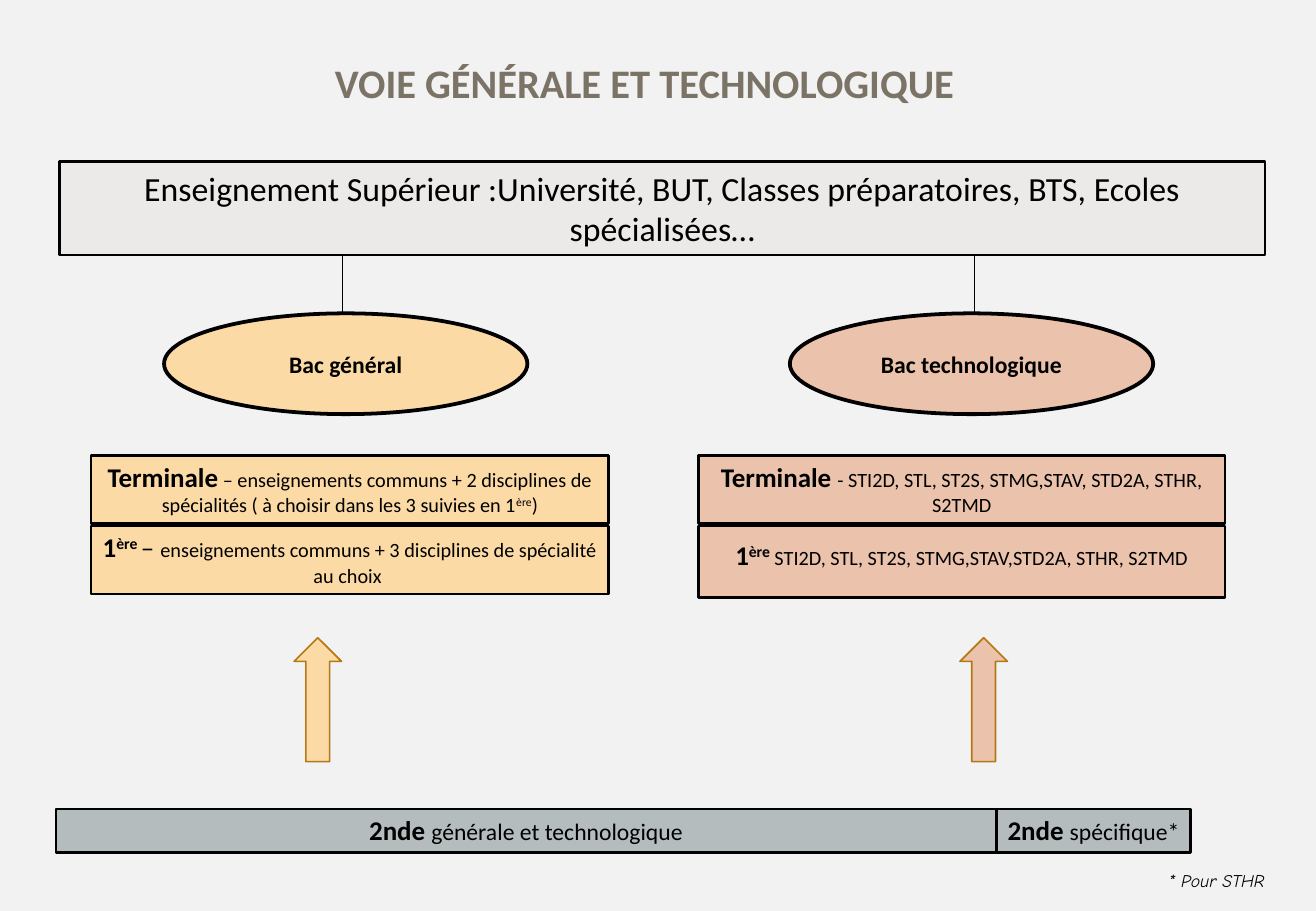
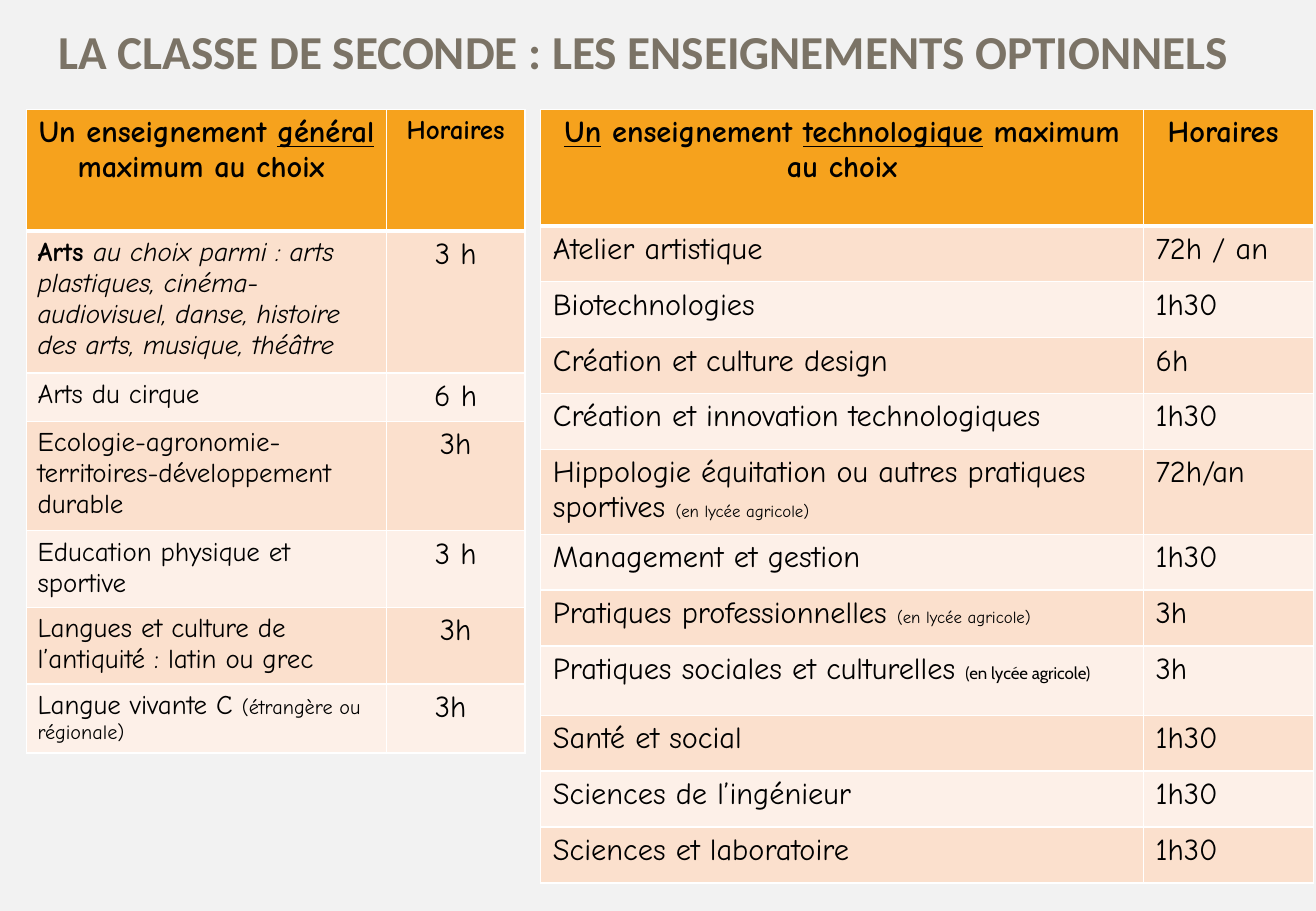
from lxml import etree
from pptx import Presentation
from pptx.dml.color import RGBColor
from pptx.enum.shapes import MSO_CONNECTOR, MSO_SHAPE
from pptx.enum.text import MSO_ANCHOR, MSO_AUTO_SIZE, PP_ALIGN
from pptx.oxml.ns import qn
from pptx.util import Inches, Pt

CENTER, LEFT = PP_ALIGN.CENTER, PP_ALIGN.LEFT
TOP, MIDDLE = MSO_ANCHOR.TOP, MSO_ANCHOR.MIDDLE
RECTANGLE, OVAL, UP_ARROW = MSO_SHAPE.RECTANGLE, MSO_SHAPE.OVAL, MSO_SHAPE.UP_ARROW
STRAIGHT = MSO_CONNECTOR.STRAIGHT
NO_AUTOFIT = MSO_AUTO_SIZE.NONE
TITLE_ONLY = 5

BACKGROUND, TITLE_COLOR, BLACK, WHITE = "F2F2F2", "7B7366", "000000", "FFFFFF"
GENERAL, TECHNOLOGICAL, SECONDE, HIGHER = "FBDAA5", "EBC2AB", "B4BCBE", "ECEAE8"
ARROW_LINE, HEADER = "B67815", "F6A21D"
BANDS = ("FBE0CD", "FDF0E8")
SANS, HAND, SMALL_SANS = "Calibri", "Comic Neue", "Cabin"
TIGHT, NORMAL = (0.09, 0.04, 0.09, 0.04), (0.1, 0.05, 0.1, 0.05)

BOLD_16 = {"size": 16, "bold": True}
SUPERSCRIPT = {"baseline": 30}
FARM_SCHOOL = "(en lycée agricole)"

GENERAL_ROWS = [
    ([("Un enseignement ", {}), ("général", {"underline": True}),
      (" maximum au choix ", {})], [("Horaires", {"size": 16})]),
    ([("Arts ", {"bold": True}),
      ("au choix parmi : arts plastiques, cinéma-audiovisuel, danse, "
       "histoire des arts, musique, théâtre", {"italic": True})], "3 h"),
    ("Arts du cirque", "6 h"),
    ("Ecologie-agronomie-territoires-développement durable", "3h"),
    ("Education physique et sportive", "3 h"),
    ("Langues et culture de l’antiquité : latin ou grec", "3h"),
    ([("Langue vivante C ", {}), ("(étrangère ou régionale)", {"size": 12})], "3h "),
]
TECHNOLOGICAL_ROWS = [
    ([("Un", {"underline": True}), (" enseignement ", {}),
      ("technologique", {"underline": True}), (" maximum au choix", {})], "Horaires "),
    ("Atelier artistique", "72h / an"),
    ("Biotechnologies", "1h30"),
    ("Création et culture design", "6h"),
    ("Création et innovation technologiques", "1h30"),
    ([("Hippologie équitation ou autres pratiques sportives ", {}),
      (FARM_SCHOOL, {"size": 10})], "72h/an"),
    ("Management et gestion", "1h30"),
    ([("Pratiques professionnelles ", {}), (FARM_SCHOOL, {"size": 10})], "3h"),
    ([("Pratiques sociales et culturelles ", {}),
      (FARM_SCHOOL, {"size": 10, "font": SMALL_SANS})], "3h"),
    ("Santé et social", "1h30"),
    ("Sciences de l’ingénieur", "1h30"),
    ("Sciences et laboratoire", "1h30"),
]


def rgb(color):
    return RGBColor.from_string(color)


def place(left, top, width, height):
    return [Inches(value) for value in (left, top, width, height)]


def write_text(text_frame, content, alignment=CENTER, **defaults):
    runs = [(content, {})] if isinstance(content, str) else content
    paragraph = text_frame.paragraphs[0]
    paragraph.alignment = alignment
    for text, changes in runs:
        style = {"font": SANS, "size": 12, "color": BLACK, "bold": False, **defaults, **changes}
        run = paragraph.add_run()
        run.text = text
        font = run.font
        font.name = style["font"]
        font.size = Pt(style["size"])
        font.bold = style["bold"]
        font.italic = style.get("italic", False)
        font.underline = style.get("underline", False)
        font.color.rgb = rgb(style["color"])
        if "baseline" in style:
            run._r.get_or_add_rPr().set("baseline", str(style["baseline"] * 1000))


def set_frame(text_frame, insets, anchor=TOP):
    text_frame.word_wrap = True
    text_frame.auto_size = NO_AUTOFIT
    text_frame.vertical_anchor = anchor
    (text_frame.margin_left, text_frame.margin_top,
     text_frame.margin_right, text_frame.margin_bottom) = place(*insets)


def add_titled_slide(presentation, title, size, box, insets):
    slide = presentation.slides.add_slide(presentation.slide_layouts[TITLE_ONLY])
    shape = slide.shapes.title
    shape.left, shape.top, shape.width, shape.height = place(*box)
    set_frame(shape.text_frame, insets)
    write_text(shape.text_frame, title, size=size, color=TITLE_COLOR, bold=True)
    return slide


def add_block(slide, kind, box, fill, line=BLACK, line_width=1.5):
    shape = slide.shapes.add_shape(kind, *place(*box))
    shape.shadow.inherit = False
    shape.fill.solid()
    shape.fill.fore_color.rgb = rgb(fill)
    shape.line.color.rgb = rgb(line)
    shape.line.width = Pt(line_width)
    return shape


def add_text_block(slide, box, fill, content, insets=TIGHT, anchor=TOP, **style):
    shape = add_block(slide, RECTANGLE, box, fill)
    set_frame(shape.text_frame, insets, anchor)
    write_text(shape.text_frame, content, **style)


def add_diploma(slide, left, fill, text):
    shape = add_block(slide, OVAL, (left, 2.58, 2.99, 0.83), fill, line_width=2.25)
    set_frame(shape.text_frame, TIGHT, MIDDLE)
    write_text(shape.text_frame, text, size=14, bold=True)


def add_arrow_line(slide, x, start, end):
    connector = slide.shapes.add_connector(
        STRAIGHT, Inches(x), Inches(start), Inches(x), Inches(end))
    connector.line.color.rgb = rgb(BLACK)
    connector.line.width = Pt(0.75)
    properties = connector._element.spPr
    etree.SubElement(connector.line._get_or_add_ln(), qn("a:tailEnd"), type="triangle")
    etree.SubElement(properties, qn("a:effectLst"))


def set_borders(cell, widths):
    properties = cell._tc.get_or_add_tcPr()
    for side, width in widths.items():
        line = etree.SubElement(properties, qn(f"a:ln{side}"), w=str(Pt(width)))
        fill = etree.SubElement(line, qn("a:solidFill"))
        etree.SubElement(fill, qn("a:srgbClr"), val=WHITE)


def add_options_table(slide, left, columns, heights, rows, margin, label_size, hours_alignment):
    top = 0.9
    table = slide.shapes.add_table(
        len(rows), len(columns), *place(left, top, sum(columns), sum(heights))).table
    for column, width in zip(table.columns, columns):
        column.width = Inches(width)
    for row_index, (row, height) in enumerate(zip(rows, heights)):
        table.rows[row_index].height = Inches(height)
        is_header = row_index == 0
        for column_index, content in enumerate(row):
            cell = table.cell(row_index, column_index)
            set_borders(cell, {"L": 1, "R": 1, "T": 3 if row_index == 1 else 1,
                               "B": 3 if is_header else 1})
            cell.fill.solid()
            cell.fill.fore_color.rgb = rgb(HEADER if is_header else BANDS[(row_index - 1) % 2])
            cell.margin_left = cell.margin_right = Inches(margin)
            cell.margin_top = cell.margin_bottom = Inches(0.05)
            body_alignment = hours_alignment if column_index else LEFT
            size = 18 if is_header or column_index else label_size
            write_text(cell.text_frame, content, CENTER if is_header else body_alignment,
                       font=HAND, size=size, bold=is_header)


def build_pathways(presentation):
    slide = add_titled_slide(presentation, "VOIE GÉNÉRALE ET TECHNOLOGIQUE", 24,
                             (0.71, 0.44, 9.19, 0.49), TIGHT)
    for left, width, label in ((0.46, 7.74, "générale et technologique"),
                               (8.2, 1.6, "spécifique*")):
        add_text_block(slide, (left, 6.66, width, 0.36), SECONDE,
                       [("2nde ", BOLD_16), (label, {})], size=14)

    add_text_block(slide, (0.75, 4.33, 4.26, 0.56), GENERAL, [
        ("1", BOLD_16), ("ère ", {**BOLD_16, **SUPERSCRIPT}), ("– ", {"size": 16}),
        ("enseignements communs + 3 disciplines de spécialité au choix ", {})])
    add_text_block(slide, (0.75, 3.75, 4.26, 0.56), GENERAL, [
        ("Terminale", BOLD_16),
        (" – enseignements communs + 2 disciplines de spécialités "
         "( à choisir dans les 3 suivies en 1", {}),
        ("ère", SUPERSCRIPT), (")", {})])
    add_text_block(slide, (5.75, 4.33, 4.33, 0.59), TECHNOLOGICAL, [
        ("1", BOLD_16), ("ère", {**BOLD_16, **SUPERSCRIPT}),
        (" STI2D, STL, ST2S, STMG,STAV,STD2A, STHR, S2TMD", {})],
        insets=(0.09, 0.04, 0.09, 0.16), anchor=MIDDLE)
    add_text_block(slide, (5.75, 3.75, 4.33, 0.56), TECHNOLOGICAL, [
        ("Terminale ", BOLD_16),
        ("- STI2D, STL, ST2S, STMG,STAV, STD2A, STHR, S2TMD", {})])

    for fill, diploma, oval_left, line_x, arrow_left in (
            (GENERAL, "Bac général", 1.35, 2.82, 2.42),
            (TECHNOLOGICAL, "Bac technologique", 6.5, 8.02, 7.9)):
        add_diploma(slide, oval_left, fill, diploma)
        add_arrow_line(slide, line_x, 2.57, 1.94)
        add_block(slide, UP_ARROW, (arrow_left, 5.25, 0.39, 1.02), fill, ARROW_LINE, 1)

    add_text_block(slide, (0.49, 1.33, 9.92, 0.77), HIGHER,
                   "Enseignement Supérieur :Université, BUT, Classes préparatoires, BTS, "
                   "Ecoles spécialisées…", insets=NORMAL, size=20)
    footnote = slide.shapes.add_textbox(*place(9.52, 7.11, 1.14, 0.29))
    set_frame(footnote.text_frame, NORMAL)
    write_text(footnote.text_frame, "* Pour STHR", LEFT, font=HAND, size=10.5, italic=True)


def build_options(presentation):
    slide = add_titled_slide(presentation,
                             "LA CLASSE DE SECONDE : LES ENSEIGNEMENTS OPTIONNELS ", 28,
                             (0.14, 0.13, 10.39, 0.77), NORMAL)
    add_options_table(slide, 0.22, (2.96, 1.14), (1, 1.17, 0.4, 0.9, 0.63, 0.63, 0.57),
                      GENERAL_ROWS, 0.09, 16, CENTER)
    add_options_table(slide, 4.45, (4.96, 1.4),
                      (0.96, *[0.46] * 4, 0.7, 0.46, 0.46, 0.57, *[0.46] * 3),
                      TECHNOLOGICAL_ROWS, 0.1, 18, LEFT)


def main():
    presentation = Presentation()
    presentation.slide_width = Inches(10.83)
    presentation.slide_height = Inches(7.5)
    background = presentation.slide_master.background.fill
    background.solid()
    background.fore_color.rgb = rgb(BACKGROUND)
    build_pathways(presentation)
    build_options(presentation)
    presentation.save("out.pptx")


if __name__ == "__main__":
    main()
